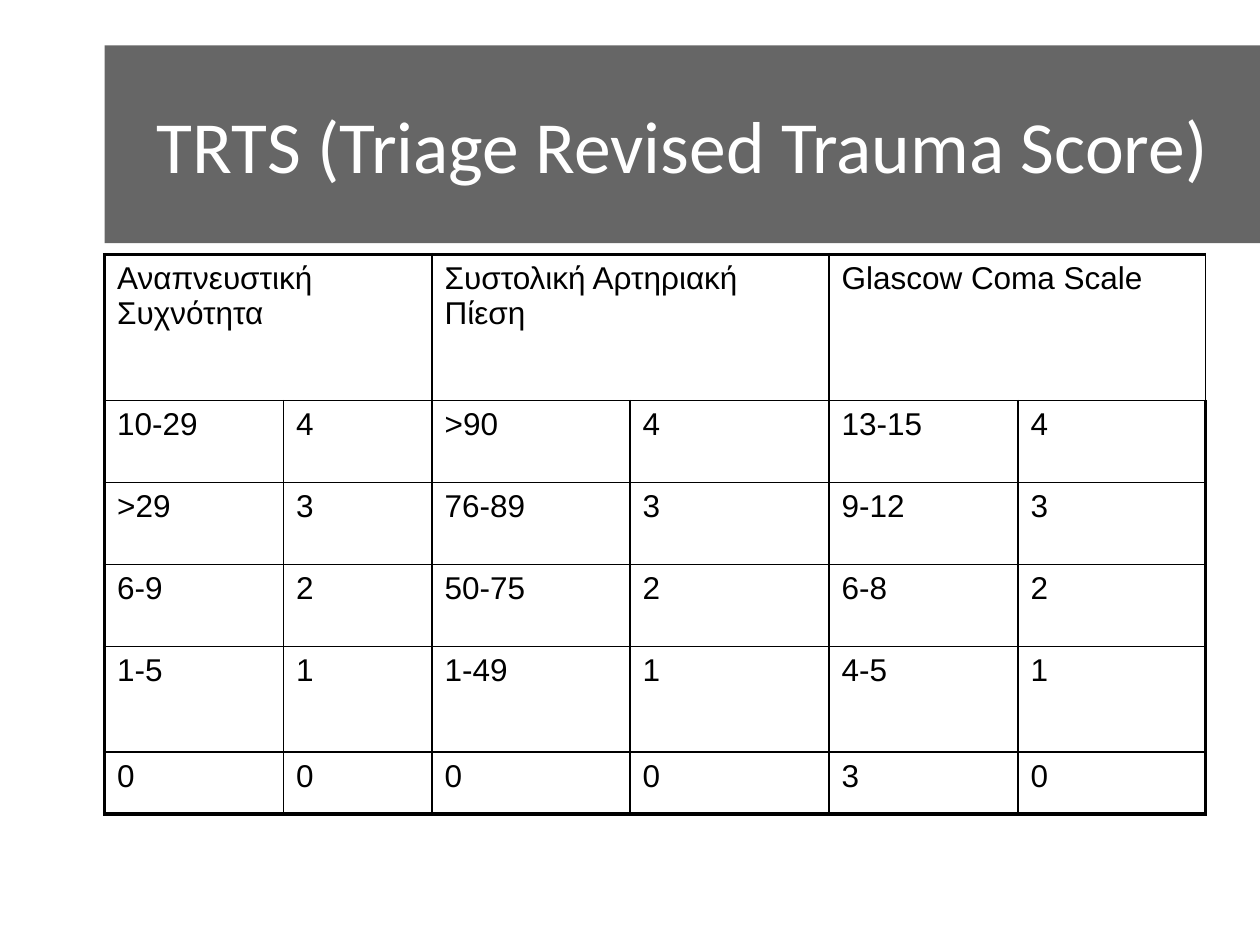
from dataclasses import dataclass

from lxml.etree import SubElement
from pptx import Presentation
from pptx.dml.color import RGBColor
from pptx.enum.text import MSO_ANCHOR, PP_ALIGN
from pptx.oxml.ns import qn
from pptx.util import Inches, Pt

BLACK = RGBColor(0x00, 0x00, 0x00)
WHITE = RGBColor(0xFF, 0xFF, 0xFF)
CHARCOAL = RGBColor(0x26, 0x26, 0x26)

LEFT = 0.83
THIN, THICK = 1, 2.25
COL_WIDTHS = (1.42, 1.18, 1.57, 1.58, 1.5, 1.49)
ROW_HEIGHTS = (1.16, 0.65, 0.65, 0.65, 0.84, 0.49)


@dataclass
class Measure:
    name: str
    ranges: tuple[str, ...]


MEASURES = (
    Measure("Αναπνευστική Συχνότητα", ("10-29", ">29", "6-9", "1-5", "0")),
    Measure("Συστολική Αρτηριακή Πίεση", (">90", "76-89", "50-75", "1-49", "0")),
    Measure("Glascow Coma Scale", ("13-15", "9-12", "6-8", "4-5", "3")),
)


def add_title(s, text: str) -> None:
    sp = s.shapes.title
    sp.left, sp.top = Inches(LEFT), Inches(0.36)
    sp.width, sp.height = Inches(10 - LEFT), Inches(1.57)
    sp.fill.solid()
    sp.fill.fore_color.rgb = CHARCOAL
    color = sp.fill._xPr.find(qn("a:solidFill"))[0]
    SubElement(color, qn("a:alpha"), val="70000")
    tf = sp.text_frame
    tf.text = text
    tf.word_wrap = True
    tf.vertical_anchor = MSO_ANCHOR.MIDDLE
    p = tf.paragraphs[0]
    p.alignment = PP_ALIGN.CENTER
    font = p.runs[0].font
    font.name, font.size, font.color.rgb = "Calibri", Pt(42), WHITE


def set_borders(cell, row: int, col: int) -> None:
    tc_pr = cell._tc.get_or_add_tcPr()
    outer = {
        "L": col == 0,
        "R": col == len(COL_WIDTHS) - 1,
        "T": row == 0,
        "B": row == len(ROW_HEIGHTS) - 1,
    }
    for side, is_outer in outer.items():
        width = Pt(THICK if is_outer else THIN)
        ln = SubElement(tc_pr, qn(f"a:ln{side}"), w=str(width))
        fill = SubElement(ln, qn("a:solidFill"))
        SubElement(fill, qn("a:srgbClr"), val=str(BLACK))


def fill_cell(cell, text: str) -> None:
    cell.text = text
    for r in cell.text_frame.paragraphs[0].runs:
        r.font.name, r.font.size, r.font.color.rgb = "Arial", Pt(18), BLACK


def add_score_table(s) -> None:
    frame = s.shapes.add_table(
        len(ROW_HEIGHTS), len(COL_WIDTHS), Inches(LEFT), Inches(2.02),
        Inches(sum(COL_WIDTHS)), Inches(sum(ROW_HEIGHTS)),
    )
    table = frame.table
    table.first_row = table.horz_banding = False
    for column, width in zip(table.columns, COL_WIDTHS):
        column.width = Inches(width)
    for i, height in enumerate(ROW_HEIGHTS):
        table.rows[i].height = Inches(height)
        for j in range(len(COL_WIDTHS)):
            cell = table.cell(i, j)
            set_borders(cell, i, j)
            cell.fill.background()
    for k, measure in enumerate(MEASURES):
        col = 2 * k
        table.cell(0, col).merge(table.cell(0, col + 1))
        fill_cell(table.cell(0, col), measure.name)
        for i, limits in enumerate(measure.ranges, start=1):
            fill_cell(table.cell(i, col), limits)
            fill_cell(table.cell(i, col + 1), str(len(measure.ranges) - i))


def main() -> None:
    prs = Presentation()
    prs.slide_width, prs.slide_height = Inches(10), Inches(7.5)
    s = prs.slides.add_slide(prs.slide_layouts[5])
    add_title(s, "TRTS (Triage Revised Trauma Score)")
    add_score_table(s)
    prs.save("out.pptx")


if __name__ == "__main__":
    main()
